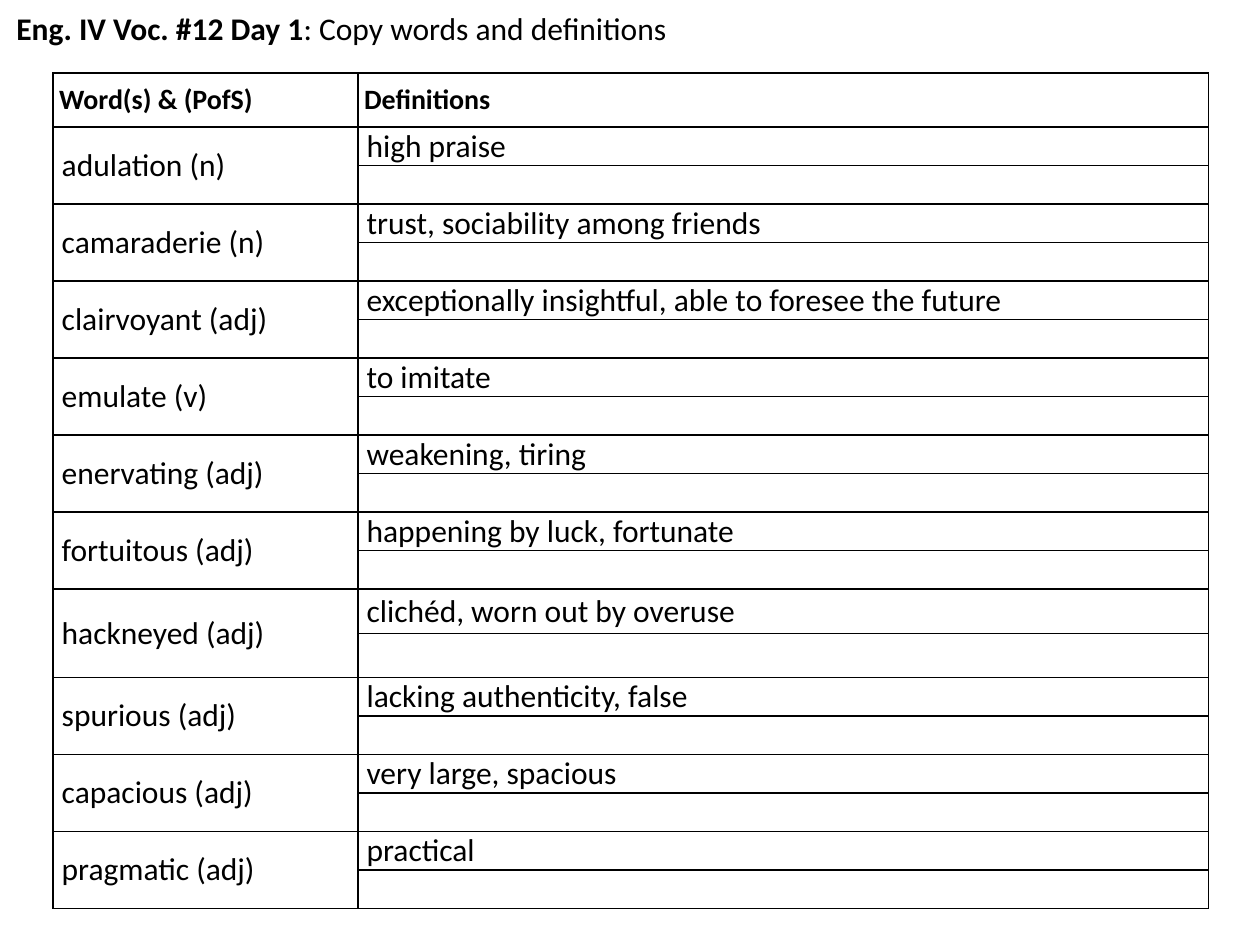
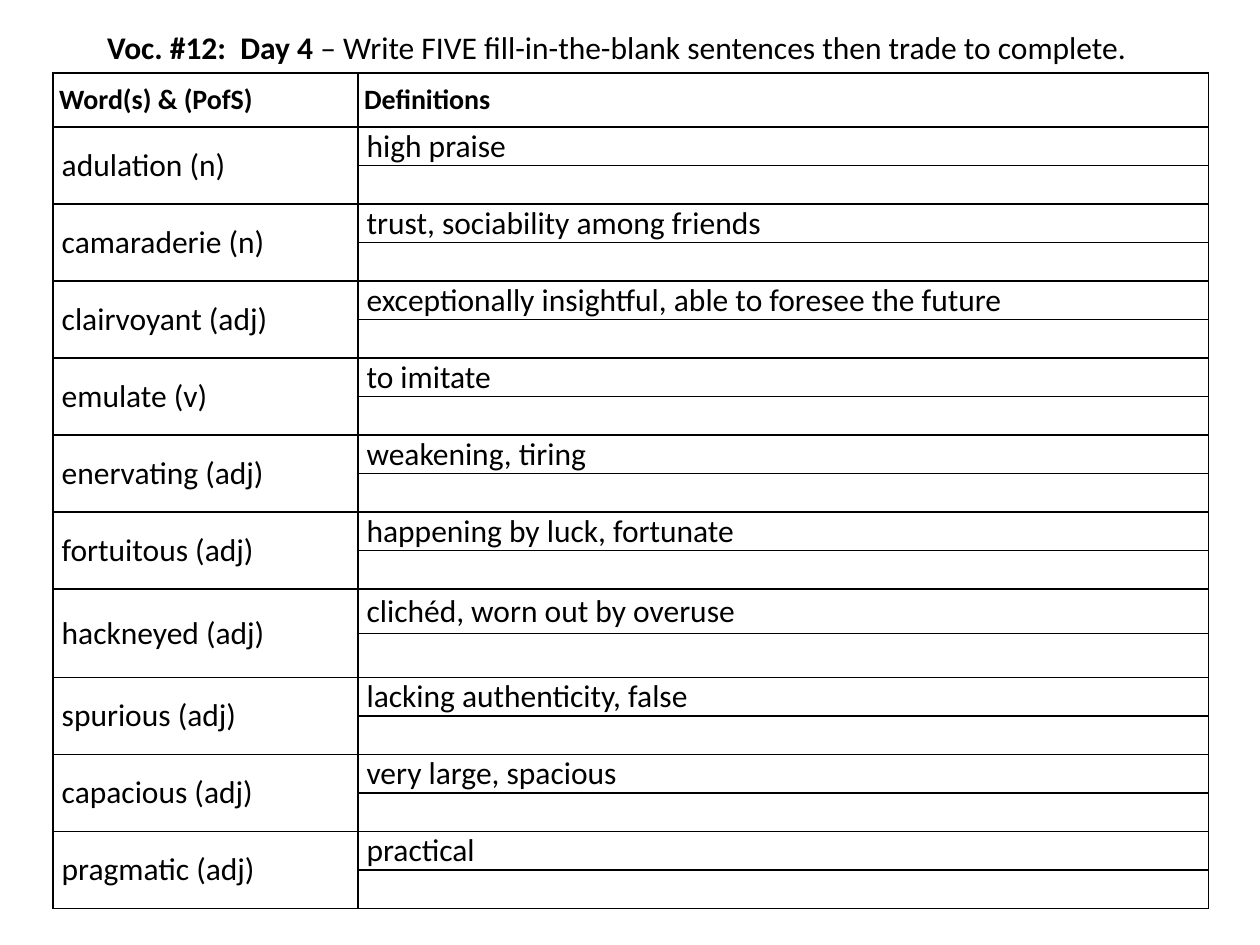
from lxml.etree import SubElement
from pptx import Presentation
from pptx.dml.color import RGBColor
from pptx.enum.text import MSO_ANCHOR, MSO_AUTO_SIZE, PP_ALIGN
from pptx.oxml import parse_xml
from pptx.oxml.ns import nsdecls, qn
from pptx.util import Inches, Pt

COLORS = {"text": "000000", "border": "000000", "background": "FFFFFF"}
FONT = "Calibri"
HEADER_STYLE = {"size": Pt(16), "bold": True}
BODY_STYLE = {"size": Pt(18), "bold": False}
LEAD_STYLE = {"size": Pt(18), "bold": True}

HEADERS = ("Word(s) & (PofS)", "Definitions")
COLUMN_WIDTHS = (2.42, 6.75)
HEADER_HEIGHT = 0.43
LINE_HEIGHT = 0.28
TALL_LINE_HEIGHT = 0.35
TALL_WORD = "hackneyed (adj)"
VOCABULARY = {
    "adulation (n)": "high praise",
    "camaraderie (n)": "trust, sociability among friends",
    "clairvoyant (adj)": "exceptionally insightful, able to foresee the future",
    "emulate (v)": "to imitate",
    "enervating (adj)": "weakening, tiring",
    "fortuitous (adj)": "happening by luck, fortunate",
    "hackneyed (adj)": "clichéd, worn out by overuse",
    "spurious (adj)": "lacking authenticity, false",
    "capacious (adj)": "very large, spacious",
    "pragmatic (adj)": "practical",
}
SLIDES = (
    {
        "box": (0, 0, 5.42, 0.45),
        "alignment": PP_ALIGN.CENTER,
        "indent": 0,
        "lead": "Eng. IV Voc. #12 Day 1",
        "task": ": Copy words and definitions",
    },
    {
        "box": (0.25, 0.17, 8.83, 0.4),
        "alignment": PP_ALIGN.LEFT,
        "indent": 0.5,
        "lead": "Voc. #12:  Day 4 ",
        "task": "– Write FIVE fill-in-the-blank sentences then trade to complete.",
    },
)


def add_run(paragraph, text, style):
    run = paragraph.add_run()
    run.text = text
    run.font.name = FONT
    run.font.color.rgb = RGBColor.from_string(COLORS["text"])
    for name, value in style.items():
        setattr(run.font, name, value)


def format_title(title, content):
    for name, value in zip(("left", "top", "width", "height"), content["box"]):
        setattr(title, name, Inches(value))
    frame = title.text_frame
    frame.word_wrap = True
    frame.auto_size = MSO_AUTO_SIZE.NONE
    frame.vertical_anchor = MSO_ANCHOR.MIDDLE
    paragraph = frame.paragraphs[0]
    paragraph.alignment = content["alignment"]
    paragraph_properties = paragraph._p.get_or_add_pPr()
    paragraph_properties.set("indent", str(Inches(content["indent"])))
    add_run(paragraph, content["lead"], LEAD_STYLE)
    add_run(paragraph, content["task"], BODY_STYLE)


def add_borders(cell):
    properties = cell._tc.get_or_add_tcPr()
    for position, side in enumerate(("lnL", "lnR", "lnT", "lnB")):
        line = parse_xml(f'<a:{side} {nsdecls("a")} w="{Pt(1)}"/>')
        fill = SubElement(line, qn("a:solidFill"))
        SubElement(fill, qn("a:srgbClr"), val=COLORS["border"])
        properties.insert(position, line)


def format_cell(cell, side_margin):
    margins = {"left": side_margin, "top": 0, "right": side_margin, "bottom": 0}
    for side, value in margins.items():
        setattr(cell, f"margin_{side}", Inches(value))
    cell.vertical_anchor = MSO_ANCHOR.MIDDLE
    cell.fill.background()
    add_borders(cell)


def fill_cell(cell, text, style):
    add_run(cell.text_frame.paragraphs[0], text, style)


def add_vocabulary_table(slide):
    heights = [HEADER_HEIGHT]
    for word in VOCABULARY:
        heights += [TALL_LINE_HEIGHT if word == TALL_WORD else LINE_HEIGHT] * 2
    frame = slide.shapes.add_table(
        len(heights), len(COLUMN_WIDTHS), Inches(0.42), Inches(0.58),
        Inches(sum(COLUMN_WIDTHS)), Inches(sum(heights)),
    )
    table = frame.table
    table.first_row = table.horz_banding = False
    for column, width in zip(table.columns, COLUMN_WIDTHS):
        column.width = Inches(width)
    for index, (row, height) in enumerate(zip(table.rows, heights)):
        row.height = Inches(height)
        for cell in row.cells:
            format_cell(cell, 0.07 if index else 0.05)
    for column, header in enumerate(HEADERS):
        fill_cell(table.cell(0, column), header, HEADER_STYLE)
    for index, (word, definition) in enumerate(VOCABULARY.items()):
        row = 1 + 2 * index
        table.cell(row, 0).merge(table.cell(row + 1, 0))
        fill_cell(table.cell(row, 0), word, BODY_STYLE)
        fill_cell(table.cell(row, 1), definition, BODY_STYLE)


def add_vocabulary_slide(presentation, content):
    """Add a slide with its task as title above the vocabulary table."""
    slide = presentation.slides.add_slide(presentation.slide_layouts[5])
    background = slide.background.fill
    background.solid()
    background.fore_color.rgb = RGBColor.from_string(COLORS["background"])
    format_title(slide.shapes.title, content)
    add_vocabulary_table(slide)


def main():
    presentation = Presentation()
    presentation.slide_width = Inches(10)
    presentation.slide_height = Inches(7.5)
    for content in SLIDES:
        add_vocabulary_slide(presentation, content)
    presentation.save("out.pptx")


if __name__ == "__main__":
    main()
